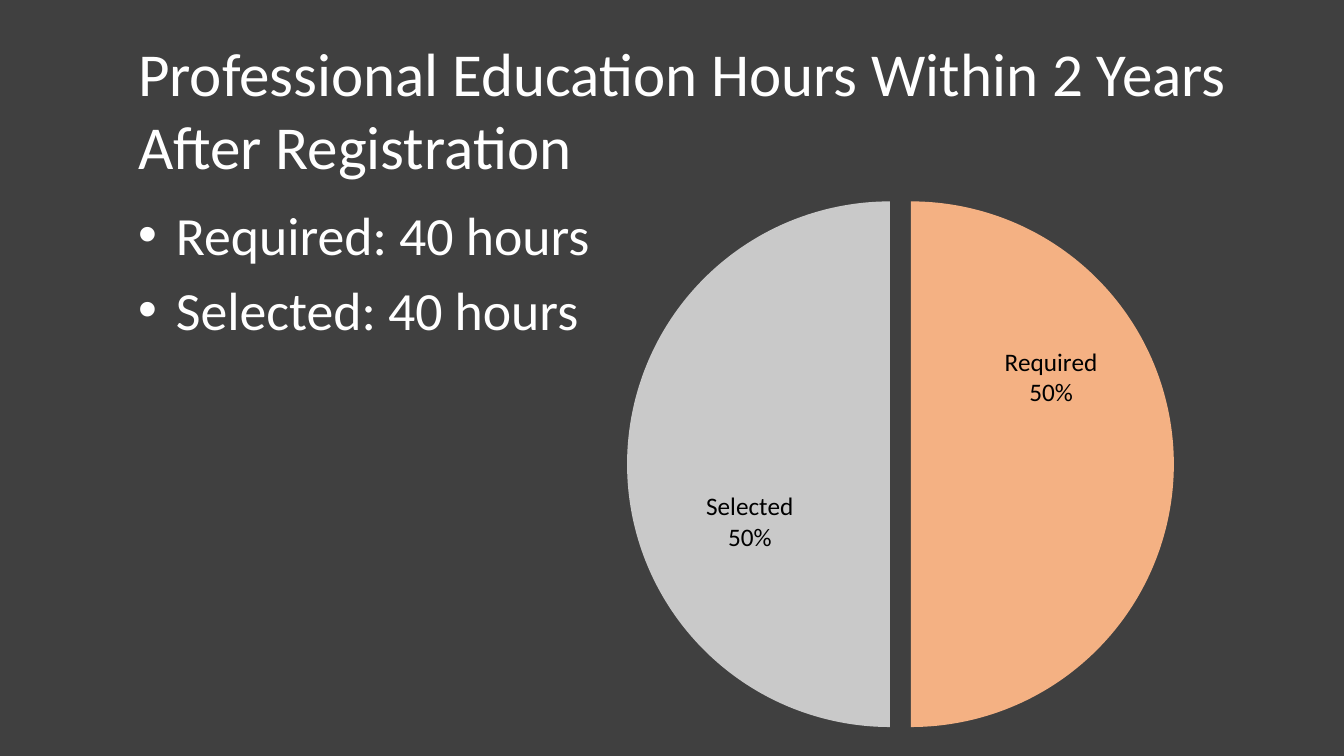
import lxml.etree
import pptx
import pptx.chart.data
import pptx.dml.color
import pptx.enum.chart
import pptx.enum.text
import pptx.oxml
import pptx.oxml.ns
import pptx.util

Inches, Pt = pptx.util.Inches, pptx.util.Pt
qn = pptx.oxml.ns.qn

FONT = "Calibri"
BACKGROUND = "404040"
TITLE = "Professional Education Hours Within 2 Years After Registration"
BULLETS = ["Required: 40 hours", "Selected: 40 hours"]
TITLE_BOX = (1.27, 0.3, 11.4, 1.37)
BODY_BOX = (1.27, 1.95, 10.8, 5.2)
CHART_BOX = (4.67, 1.77, 8.61, 5.73)
PLOT_AREA = {"x": 0.18, "y": 0.02, "w": 0.63, "h": 0.95}
EXPLOSION = 4
# category, value, colour, label shift as a share of the chart size
SLICES = [
    ("Required", 50, "F4B183", {"x": 0.01, "y": -0.15}),
    ("Selected", 50, "C9C9C9", {"x": -0.01, "y": 0.1}),
]


def color(text):
    return pptx.dml.color.RGBColor.from_string(text)


def set_font(font, size, shade):
    for name, value in {"name": FONT, "size": Pt(size), "bold": False}.items():
        setattr(font, name, value)
    font.color.rgb = color(shade)


def fill_placeholder(holder, box, lines, size, gap=0):
    holder.left, holder.top, holder.width, holder.height = map(Inches, box)
    frame = holder.text_frame
    frame.text = "\n".join(lines)
    settings = {
        "word_wrap": True,
        "auto_size": pptx.enum.text.MSO_AUTO_SIZE.NONE,
        "vertical_anchor": pptx.enum.text.MSO_ANCHOR.TOP,
    }
    for name, value in settings.items():
        setattr(frame, name, value)
    for index, para in enumerate(frame.paragraphs):
        para.alignment = pptx.enum.text.PP_ALIGN.LEFT
        para.space_before = Pt(gap if index else 0)
        set_font(para.font, size, "FFFFFF")


def manual_layout(modes, values):
    layout = pptx.oxml.parse_xml(
        '<c:layout xmlns:c="http://schemas.openxmlformats.org/drawingml/2006/chart">'
        "<c:manualLayout/></c:layout>")
    for name, value in {**modes, **values}.items():
        lxml.etree.SubElement(layout[0], qn("c:" + name)).set("val", str(value))
    return layout


def format_label(label, shift):
    """Show category and percentage on two lines, moved from the slice centre."""
    label.position = pptx.enum.chart.XL_LABEL_POSITION.CENTER
    set_font(label.font, 18, "000000")


def add_pie(page):
    data = pptx.chart.data.CategoryChartData()
    data.categories = [name for name, *_ in SLICES]
    data.add_series("Series 1", [value for _, value, *_ in SLICES])
    chart = page.shapes.add_chart(
        pptx.enum.chart.XL_CHART_TYPE.PIE, *map(Inches, CHART_BOX), data).chart
    chart.has_title = chart.has_legend = False
    set_font(chart.font, 18, "000000")
    plot = chart.plots[0]
    plot.vary_by_categories = True
    series = plot.series[0]
    for index, (_, _, shade, shift) in enumerate(SLICES):
        point = series.points[index]
        point.format.fill.solid()
        point.format.fill.fore_color.rgb = color(shade)
        point.format.line.fill.background()
        format_label(point.data_label, shift)

    area = chart._chartSpace.find(".//" + qn("c:plotArea"))
    for old in area.findall(qn("c:layout")):
        area.remove(old)
    modes = {"layoutTarget": "inner", "xMode": "edge", "yMode": "edge"}
    area.insert(0, manual_layout(modes, PLOT_AREA))

    for node, (*_, shift) in zip(area.iter(qn("c:dLbl")), SLICES):
        node.find(qn("c:idx")).addnext(manual_layout({}, shift))
        for name, shown in {"showVal": 0, "showCatName": 1, "showPercent": 1}.items():
            node.find(qn("c:" + name)).set("val", str(shown))
        separator = lxml.etree.SubElement(node, qn("c:separator"))
        separator.text = "\n"

    explosion = lxml.etree.Element(qn("c:explosion"), val=str(EXPLOSION))
    area.find(".//" + qn("c:ser")).find(qn("c:tx")).addnext(explosion)


def main():
    deck = pptx.Presentation()
    deck.slide_width, deck.slide_height = Inches(13.33), Inches(7.5)
    page = deck.slides.add_slide(deck.slide_layouts[1])
    page.background.fill.solid()
    page.background.fill.fore_color.rgb = color(BACKGROUND)
    fill_placeholder(page.shapes.title, TITLE_BOX, [TITLE], 43.6)
    fill_placeholder(page.placeholders[1], BODY_BOX, BULLETS, 38.4, gap=7.7)
    add_pie(page)
    deck.save("out.pptx")


if __name__ == "__main__":
    main()
